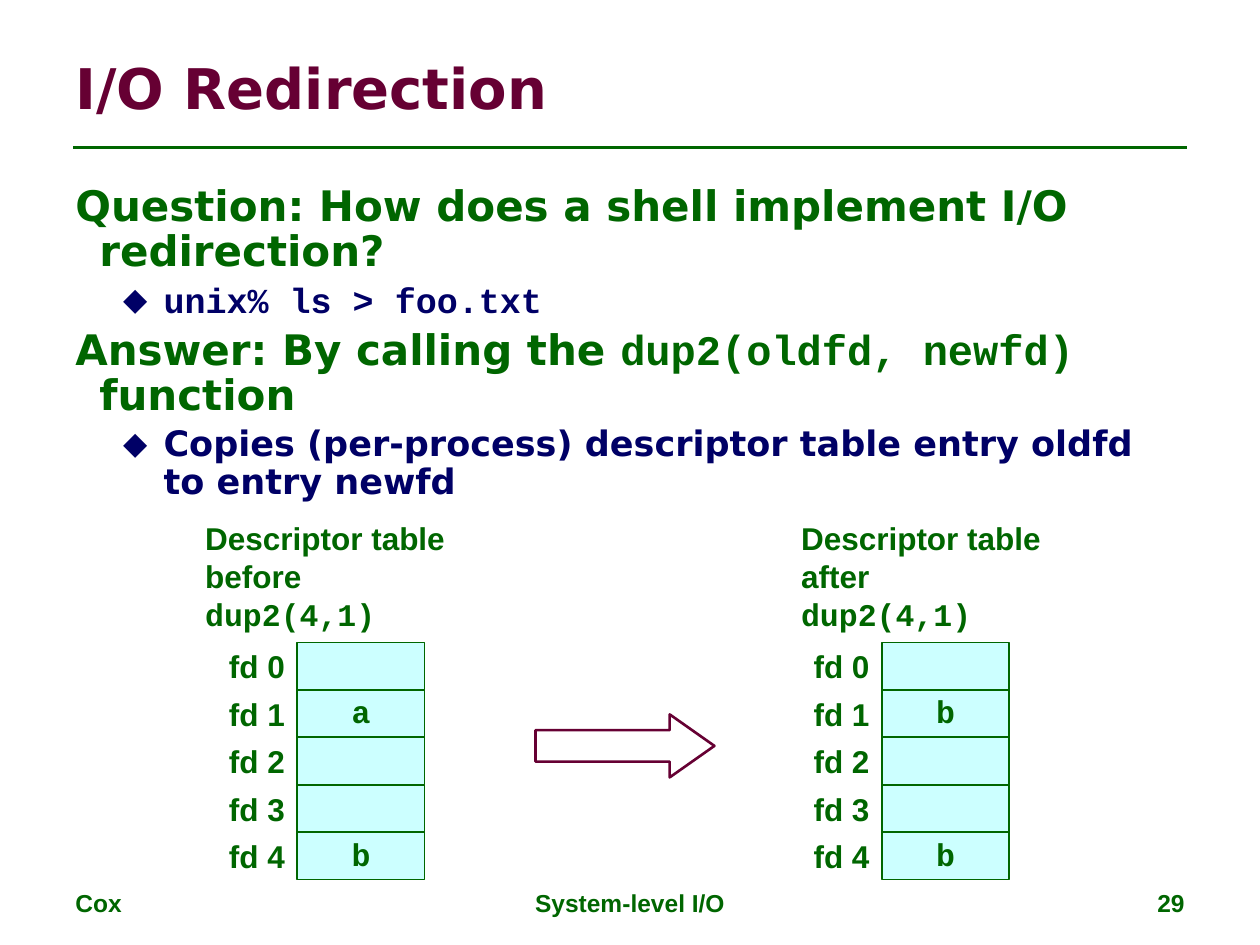
from lxml import etree
from pptx import Presentation
from pptx import util as u
from pptx.dml.color import RGBColor
from pptx.enum import shapes, text
from pptx.oxml.ns import qn

GREEN, NAVY, MAROON, CYAN = "006600", "000066", "660033", "CCFFFF"
SANS, MONO, HEAD = "Arial", "Courier New", "DejaVu Sans"
LEFT, CENTER, RIGHT = text.PP_ALIGN.LEFT, text.PP_ALIGN.CENTER, text.PP_ALIGN.RIGHT
TOP, MIDDLE = text.MSO_ANCHOR.TOP, text.MSO_ANCHOR.MIDDLE


def color(value):
    """Turn a hex string into a colour."""
    return RGBColor.from_string(value)


def inches(*lengths):
    """Convert numbers to lengths in inches."""
    return [u.Inches(length) for length in lengths]


def write(para, words, size=18, font=SANS, ink=GREEN, align=LEFT, spacing=1.0):
    """Add one bold span to a paragraph and format both."""
    para.alignment = align
    para.line_spacing = spacing
    span = para.add_run()
    span.text = words
    span.font.size = u.Pt(size)
    span.font.name = font
    span.font.bold = True
    span.font.color.rgb = color(ink)


def add_frame(page, box, anchor=MIDDLE):
    """Add a wrapping text box and return its text frame."""
    frame = page.shapes.add_textbox(*inches(*box)).text_frame
    frame.word_wrap = True
    frame.vertical_anchor = anchor
    return frame


def add_label(page, box, words, anchor=MIDDLE, **style):
    """Add a text box holding one span."""
    write(add_frame(page, box, anchor).paragraphs[0], words, **style)


def add_outline(page, kind, box, line, width, fill=None):
    """Add a preset shape with a line and an optional fill."""
    shape = page.shapes.add_shape(kind, *inches(*box))
    shape.shadow.inherit = False
    if fill:
        shape.fill.solid()
        shape.fill.fore_color.rgb = color(fill)
    else:
        shape.fill.background()
    shape.line.color.rgb = color(line)
    shape.line.width = u.Pt(width)
    return shape


def indent(para, left, first, bullet=None):
    """Set a hanging indent and an optional bullet."""
    props = para._p.get_or_add_pPr()
    props.set("marL", str(u.Inches(left)))
    props.set("indent", str(u.Inches(first)))
    if bullet:
        etree.SubElement(props, qn("a:buSzPct")).set("val", "90000")
        etree.SubElement(props, qn("a:buFont")).set("typeface", HEAD)
        etree.SubElement(props, qn("a:buChar")).set("char", bullet)


def add_header(page, box):
    """Place the title and the rule beneath it."""
    left, top, width, height = box
    add_label(page, box, "I/O Redirection", size=32, font=HEAD, ink=MAROON)
    rule_y = top + height + 0.09
    rule = page.shapes.add_connector(
        shapes.MSO_CONNECTOR.STRAIGHT,
        *inches(left + 0.08, rule_y, left + width - 0.08, rule_y))
    rule.line.color.rgb = color(GREEN)
    rule.line.width = u.Pt(1.5)
    etree.SubElement(rule._element.spPr, qn("a:effectLst"))


def add_body(page, box):
    """Place the question and the answer with their bullets."""
    items = [
        (0, [("Question: How does a shell implement I/O redirection?", HEAD)]),
        (1, [("unix% ls > foo.txt", MONO)]),
        (0, [("Answer: By calling the ", HEAD), ("dup2(oldfd, newfd)", MONO),
             (" function", HEAD)]),
        (1, [("Copies (per-process) descriptor table entry oldfd to entry newfd", HEAD)]),
    ]
    frame = add_frame(page, box, TOP)
    for index, (level, spans) in enumerate(items):
        para = frame.add_paragraph() if index else frame.paragraphs[0]
        para.level = level
        size, ink = (20, NAVY) if level else (24, GREEN)
        for words, font in spans:
            write(para, words, size=size, font=font, ink=ink, spacing=0.9)
        para.space_before = u.Pt(size * 0.2)
        if level:
            indent(para, 0.7, -0.32, "◆")
        else:
            indent(para, 0.19, -0.19)


def add_heading(page, box, moment):
    """Place the heading above a descriptor table."""
    frame = add_frame(page, box)
    write(frame.paragraphs[0], "Descriptor table")
    para = frame.add_paragraph()
    write(para, moment + " ")
    para.add_line_break()
    write(para, "dup2(4,1)", font=MONO)


def add_descriptors(page, box, entries):
    """Stack equal cells with a descriptor label to the left of each."""
    left, top, width, height = box
    step = height / len(entries)
    for index, entry in enumerate(entries):
        y = top + index * step
        cell = add_outline(page, shapes.MSO_SHAPE.RECTANGLE,
                           (left, y, width, step), GREEN, 1, CYAN)
        if entry:
            cell.text_frame.vertical_anchor = MIDDLE
            write(cell.text_frame.paragraphs[0], entry, font=MONO,
                  align=CENTER, spacing=0.9)
        add_label(page, (left - 1, y, 1, step), f"fd {index}", align=RIGHT)


def add_footer(page, box):
    """Place the author, the topic and the page number."""
    left, top, width, height = box
    side, middle = 2.33, 3.17
    parts = [("Cox", left, side, LEFT),
             ("System-level I/O", left + (width - middle) / 2, middle, CENTER),
             ("29", left + width - side, side, RIGHT)]
    for words, x, span_width, align in parts:
        add_label(page, (x, top, span_width, height), words, anchor=TOP,
                  size=14, align=align)


def main():
    """Build and save the deck."""
    deck = Presentation()
    deck.slide_width, deck.slide_height = inches(10, 7.5)
    page = deck.slides.add_slide(deck.slide_layouts[6])
    add_header(page, (0.5, 0.3, 9, 0.78))
    add_body(page, (0.5, 1.42, 9, 2.75))
    add_heading(page, (1.53, 4.22, 2.38, 0.7), "before")
    add_descriptors(page, (2.36, 5.1, 1.01, 1.88), ["", "a", "", "", "b"])
    add_heading(page, (6.26, 4.22, 2.16, 0.7), "after")
    add_descriptors(page, (7, 5.1, 1.01, 1.88), ["", "b", "", "", "b"])
    arrow = add_outline(page, shapes.MSO_SHAPE.RIGHT_ARROW,
                        (4.25, 5.67, 1.42, 0.5), MAROON, 1.5)
    arrow.adjustments[1] = 0.71
    add_footer(page, (0.5, 7, 9, 0.35))
    deck.save("out.pptx")


if __name__ == "__main__":
    main()
